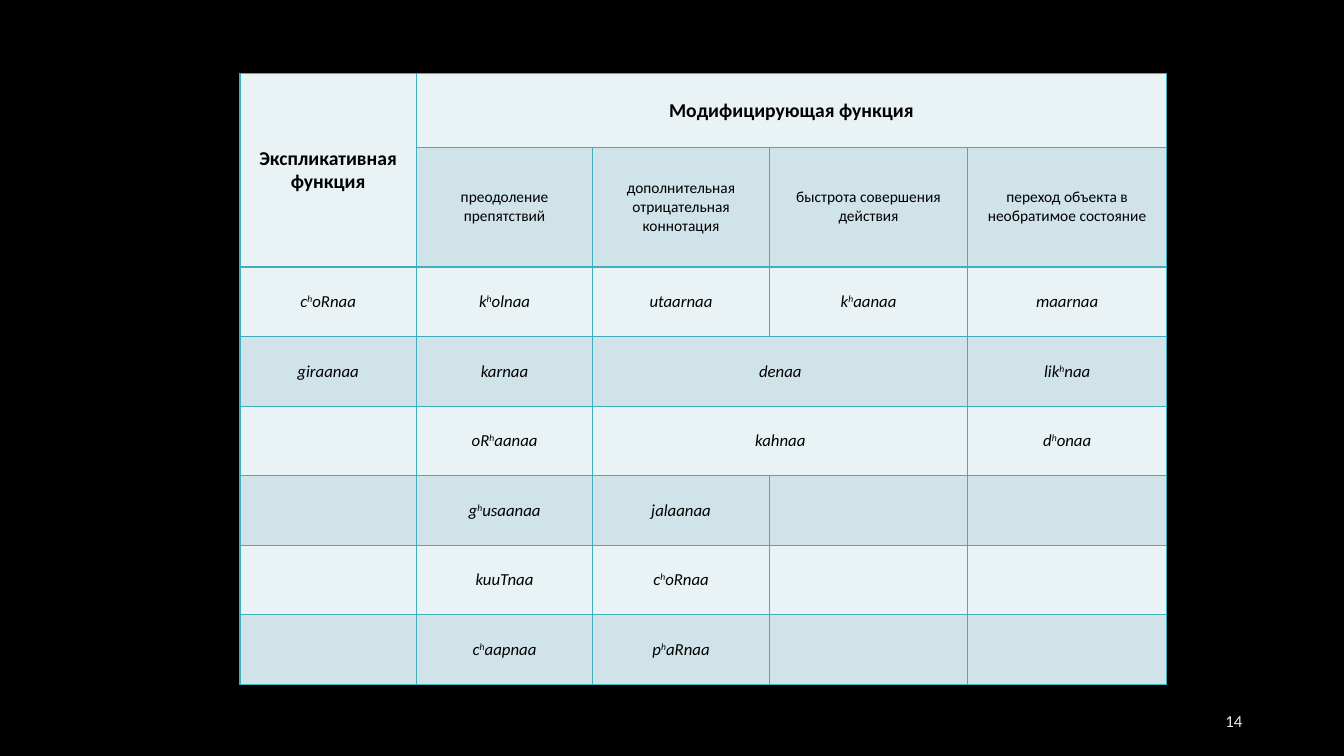
from lxml import etree
from pptx import Presentation
from pptx.dml.color import RGBColor
from pptx.enum.text import MSO_ANCHOR, PP_ALIGN
from pptx.oxml.ns import qn
from pptx.util import Pt

PX = 9144  # 100 px to the inch
MIDDLE, CENTER, RIGHT = MSO_ANCHOR.MIDDLE, PP_ALIGN.CENTER, PP_ALIGN.RIGHT
FONT = "Calibri"
COLORS = {"back": "000000", "text": "000000", "light": "E9F2F4",
          "dark": "CFE3E8", "border": "41AEBD", "number": "EDEDED"}
COLS = [175, 175, 175, 197, 197]
ROWS = [73, 119] + [69] * 6

# |h| marks a raised letter, None a cell covered by a merge
CELLS = [
    ["Экспликативная функция", "Модифицирующая функция", None, None, None],
    [None, "преодоление препятствий", "дополнительная отрицательная коннотация",
     "быстрота совершения действия", "переход объекта в необратимое состояние"],
    ["c|h|oRnaa", "k|h|olnaa", "utaarnaa", "k|h|aanaa", "maarnaa"],
    ["giraanaa", "karnaa", "denaa", None, "lik|h|naa"],
    ["", "oR|h|aanaa", "kahnaa", None, "d|h|onaa"],
    ["", "g|h|usaanaa", "jalaanaa", "", ""],
    ["", "kuuTnaa", "c|h|oRnaa", "", ""],
    ["", "c|h|aapnaa", "p|h|aRnaa", "", ""],
]
MERGES = [((0, 0), (1, 0)), ((0, 1), (0, 4)), ((3, 2), (3, 3)), ((4, 2), (4, 3))]


def add_borders(cell):
    tcPr = cell._tc.get_or_add_tcPr()
    for i, side in enumerate(("a:lnL", "a:lnR", "a:lnT", "a:lnB")):
        ln = etree.Element(qn(side), w=str(Pt(1)))
        fill = etree.SubElement(ln, qn("a:solidFill"))
        etree.SubElement(fill, qn("a:srgbClr"), val=COLORS["border"])
        tcPr.insert(i, ln)


def style_run(r, size, color):
    r.font.name = FONT
    r.font.size = Pt(size)
    r.font.color.rgb = RGBColor.from_string(COLORS[color])


prs = Presentation()
prs.slide_width, prs.slide_height = 1333 * PX, 750 * PX
s = prs.slides.add_slide(prs.slide_layouts[6])
s.background.fill.solid()
s.background.fill.fore_color.rgb = RGBColor.from_string(COLORS["back"])

# Table of verbs by function
table = s.shapes.add_table(len(ROWS), len(COLS), 238 * PX, 73 * PX,
                           sum(COLS) * PX, sum(ROWS) * PX).table
table.first_row = table.horz_banding = False
for col, width in zip(table.columns, COLS):
    col.width = width * PX
for row, height in zip(table.rows, ROWS):
    row.height = height * PX

for i, texts in enumerate(CELLS):
    size = {0: 14, 1: 11}.get(i, 12)
    for j, text in enumerate(texts):
        cell = table.cell(i, j)
        cell.fill.solid()
        cell.fill.fore_color.rgb = RGBColor.from_string(
            COLORS["dark" if i % 2 else "light"])
        add_borders(cell)
        cell.vertical_anchor = MIDDLE
        cell.margin_left = cell.margin_right = 7 * PX
        cell.margin_top = cell.margin_bottom = 0
        if not text:
            continue
        p = cell.text_frame.paragraphs[0]
        p.alignment = CENTER
        for k, part in enumerate(text.split("|")):
            r = p.add_run()
            r.text = part
            style_run(r, size, "text")
            r.font.bold = i == 0
            r.font.italic = i > 1
            if k % 2:
                r._r.get_or_add_rPr().set("baseline", "30000")

for first, last in MERGES:
    table.cell(*first).merge(table.cell(*last))

# Slide number
tf = s.shapes.add_textbox(942 * PX, 695 * PX, 300 * PX, 40 * PX).text_frame
tf.word_wrap = True
tf.vertical_anchor = MIDDLE
tf.text = "14"
p = tf.paragraphs[0]
p.alignment = RIGHT
style_run(p.runs[0], 12, "number")

prs.save("out.pptx")
